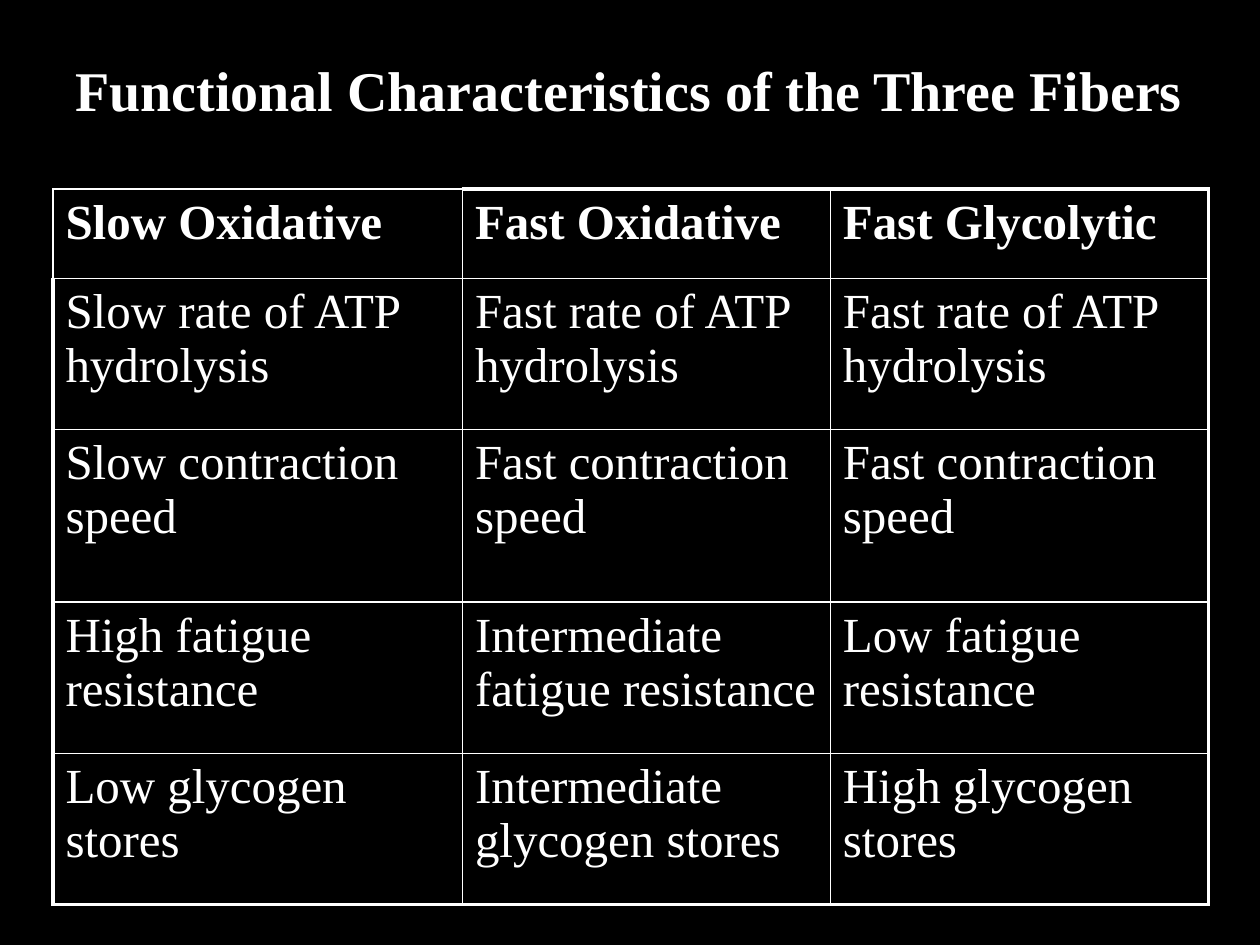
from dataclasses import dataclass

from lxml.etree import SubElement
from pptx import Presentation
from pptx.dml.color import RGBColor
from pptx.enum.text import MSO_ANCHOR, PP_ALIGN
from pptx.oxml import parse_xml
from pptx.oxml.ns import nsdecls, qn
from pptx.util import Inches, Pt


@dataclass(frozen=True)
class Theme:
    background: RGBColor = RGBColor(0, 0, 0)
    ink: RGBColor = RGBColor(255, 255, 255)
    font: str = "Times New Roman"
    title_size: Pt = Pt(32)
    cell_size: Pt = Pt(28)
    inner_rule: Pt = Pt(1)
    outer_rule: Pt = Pt(2.25)


THEME = Theme()
FIBERS = [
    ("Slow Oxidative", "Fast Oxidative", "Fast Glycolytic"),
    ("Slow rate of ATP hydrolysis", "Fast rate of ATP hydrolysis", "Fast rate of ATP hydrolysis"),
    ("Slow contraction speed", "Fast contraction speed", "Fast contraction speed"),
    ("High fatigue resistance", "Intermediate fatigue resistance", "Low fatigue resistance"),
    ("Low glycogen stores", "Intermediate glycogen stores", "High glycogen stores"),
]
COLUMN_WIDTHS = [3.25, 2.92, 3]
ROW_HEIGHTS = [0.71, 1.2, 1.37, 1.2, 1.2]


def write(paragraph, text, size, bold):
    run = paragraph.add_run()
    run.text = text
    run.font.name = THEME.font
    run.font.size = size
    run.font.bold = bold
    run.font.color.rgb = THEME.ink


def set_borders(cell, widths):
    """Rule the left, right, top and bottom sides; lines must precede the fill."""
    properties = cell._tc.get_or_add_tcPr()
    for position, (side, width) in enumerate(zip("LRTB", widths)):
        properties.insert(position, parse_xml(
            f'<a:ln{side} {nsdecls("a")} w="{int(width)}"><a:solidFill>'
            f'<a:srgbClr val="{THEME.ink}"/></a:solidFill></a:ln{side}>'))


prs = Presentation()
prs.slide_width, prs.slide_height = Inches(10), Inches(7.5)
slide = prs.slides.add_slide(prs.slide_layouts[6])
slide.background.fill.solid()
slide.background.fill.fore_color.rgb = THEME.background

title = slide.shapes.add_textbox(Inches(0.33), Inches(0.33), Inches(9.33), Inches(0.75))
title.line.color.rgb = THEME.background
title.line.width = Pt(0.75)
title.text_frame.word_wrap = True
title.text_frame.vertical_anchor = MSO_ANCHOR.MIDDLE
heading = title.text_frame.paragraphs[0]
heading.alignment = PP_ALIGN.CENTER
write(heading, "Functional Characteristics of the Three Fibers", THEME.title_size, True)

table = slide.shapes.add_table(
    len(FIBERS), len(COLUMN_WIDTHS), Inches(0.42), Inches(1.5),
    Inches(sum(COLUMN_WIDTHS)), Inches(sum(ROW_HEIGHTS))).table
table.horz_banding = False
for column, width in zip(table.columns, COLUMN_WIDTHS):
    column.width = Inches(width)
for row, height in zip(table.rows, ROW_HEIGHTS):
    row.height = Inches(height)

last_row, last_col = len(FIBERS) - 1, len(COLUMN_WIDTHS) - 1
for r, traits in enumerate(FIBERS):
    for c, trait in enumerate(traits):
        cell = table.cell(r, c)
        cell.fill.solid()
        cell.fill.fore_color.rgb = THEME.background
        # The first header cell keeps thin rules on its outer sides.
        outer_sides = (c == 0 and r > 0, c == last_col, r == 0 and c > 0, r == last_row)
        set_borders(cell, [THEME.outer_rule if outer else THEME.inner_rule
                           for outer in outer_sides])
        paragraph = cell.text_frame.paragraphs[0]
        spacing = SubElement(paragraph._p.get_or_add_pPr(), qn("a:spcBef"))
        SubElement(spacing, qn("a:spcPct")).set("val", "20000")
        write(paragraph, trait, THEME.cell_size, r == 0)

prs.save("out.pptx")
